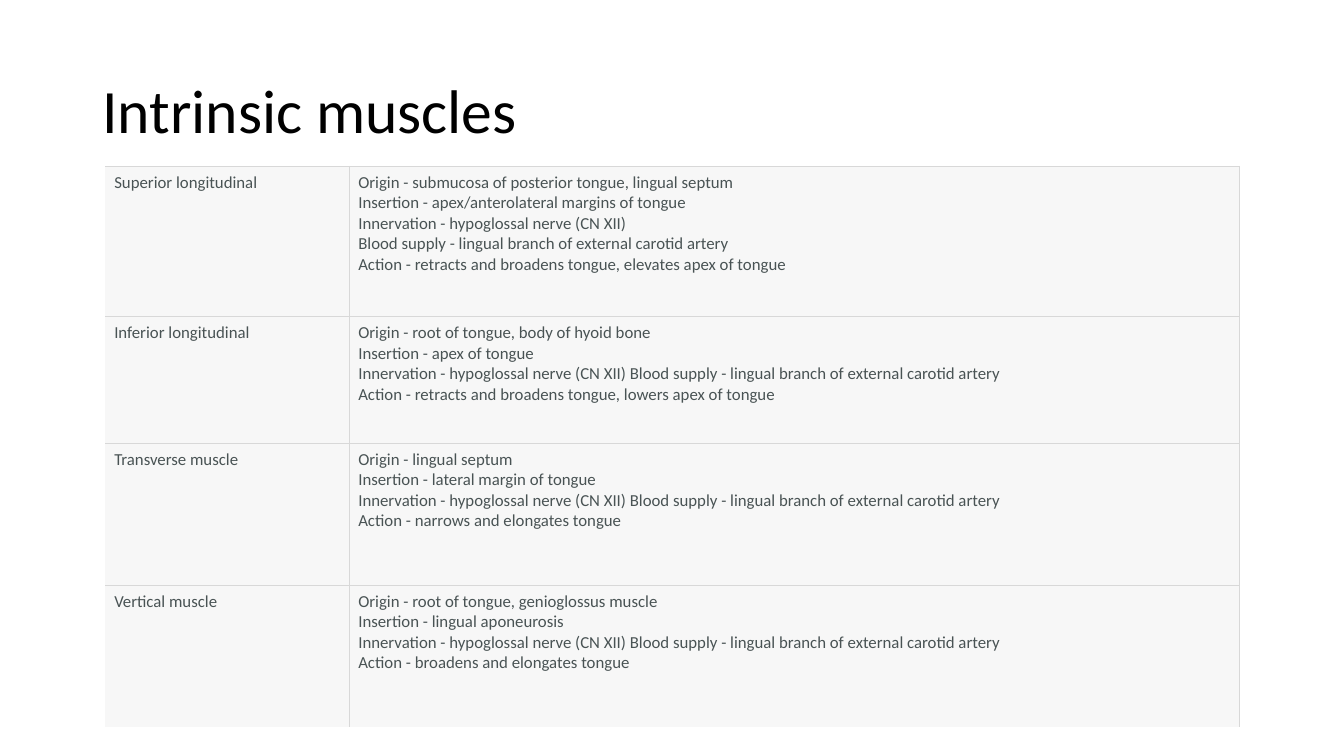
from copy import deepcopy
from dataclasses import dataclass

from lxml import etree
from pptx import Presentation
from pptx.dml.color import RGBColor
from pptx.enum import text
from pptx.oxml import ns
from pptx.util import Cm, Pt


@dataclass(frozen=True)
class Theme:
    font: str = "Calibri"
    title_size: float = 44
    body_size: float = 12
    title_color: str = "000000"
    body_color: str = "495354"
    cell_fill: str = "F7F7F7"
    border: str = "D8D8D8"
    border_width: float = 0.75


@dataclass(frozen=True)
class Muscle:
    name: str
    facts: tuple[str, ...]
    height: float


THEME = Theme()
COL_WIDTHS = (6.15, 22.43)
NERVE = "Innervation - hypoglossal nerve (CN XII)"
BLOOD = "Blood supply - lingual branch of external carotid artery"
NERVE_AND_BLOOD = f"{NERVE} {BLOOD}"
MUSCLES = (
    Muscle("Superior longitudinal", (
        "Origin - submucosa of posterior tongue, lingual septum",
        "Insertion - apex/anterolateral margins of tongue",
        NERVE,
        BLOOD,
        "Action - retracts and broadens tongue, elevates apex of tongue",
    ), 3.79),
    Muscle("Inferior longitudinal", (
        "Origin - root of tongue, body of hyoid bone",
        "Insertion - apex of tongue",
        NERVE_AND_BLOOD,
        "Action - retracts and broadens tongue, lowers apex of tongue",
    ), 3.19),
    Muscle("Transverse muscle", (
        "Origin - lingual septum",
        "Insertion - lateral margin of tongue",
        NERVE_AND_BLOOD,
        "Action - narrows and elongates tongue",
    ), 3.58),
    Muscle("Vertical muscle", (
        "Origin - root of tongue, genioglossus muscle",
        "Insertion - lingual aponeurosis",
        NERVE_AND_BLOOD,
        "Action - broadens and elongates tongue",
    ), 3.58),
)


def write_text(tf, *lines: str, size: float, color: str, spacing: float = 1.0) -> None:
    p = tf.paragraphs[0]
    p.line_spacing = spacing
    for i, line in enumerate(lines):
        if i:
            p.add_line_break()
            p._p[-1].append(deepcopy(r._r.rPr))
        r = p.add_run()
        r.text = line
        r.font.name = THEME.font
        r.font.size = Pt(size)
        r.font.color.rgb = RGBColor.from_string(color)


def set_borders(cell, sides: str) -> None:
    tc_pr = cell._tc.get_or_add_tcPr()
    for i, side in enumerate("LRTB"):
        ln = etree.Element(ns.qn(f"a:ln{side}"), w=str(Pt(THEME.border_width)))
        if side in sides:
            fill = etree.SubElement(ln, ns.qn("a:solidFill"))
            etree.SubElement(fill, ns.qn("a:srgbClr"), val=THEME.border)
        else:
            etree.SubElement(ln, ns.qn("a:noFill"))
        tc_pr.insert(i, ln)


def fill_cell(cell, lines: tuple[str, ...], sides: str) -> None:
    cell.margin_left = cell.margin_right = Cm(0.23)
    cell.margin_top = cell.margin_bottom = Cm(0.15)
    cell.vertical_anchor = text.MSO_ANCHOR.TOP
    cell.fill.solid()
    cell.fill.fore_color.rgb = RGBColor.from_string(THEME.cell_fill)
    write_text(cell.text_frame, *lines, size=THEME.body_size, color=THEME.body_color)
    set_borders(cell, sides)


def add_title(slide, title: str) -> None:
    sp = slide.shapes.add_textbox(Cm(2.33), Cm(1.01), Cm(29.21), Cm(3.68))
    tf = sp.text_frame
    tf.word_wrap = True
    tf.vertical_anchor = text.MSO_ANCHOR.MIDDLE
    write_text(tf, title, size=THEME.title_size, color=THEME.title_color, spacing=0.9)


def add_muscle_table(slide, muscles: tuple[Muscle, ...]) -> None:
    height = sum(m.height for m in muscles)
    table = slide.shapes.add_table(
        len(muscles), len(COL_WIDTHS),
        Cm(2.65), Cm(4.19), Cm(sum(COL_WIDTHS)), Cm(height),
    ).table
    table.first_row = table.horz_banding = False
    for col, width in zip(table.columns, COL_WIDTHS):
        col.width = Cm(width)
    for i, muscle in enumerate(muscles):
        table.rows[i].height = Cm(muscle.height)
        bottom = "B" if i < len(muscles) - 1 else ""
        fill_cell(table.cell(i, 0), (muscle.name,), "RT" + bottom)
        fill_cell(table.cell(i, 1), muscle.facts, "LRT" + bottom)


def main() -> None:
    prs = Presentation()
    prs.slide_width, prs.slide_height = Cm(33.87), Cm(19.05)
    slide = prs.slides.add_slide(prs.slide_layouts[6])
    add_title(slide, "Intrinsic muscles")
    add_muscle_table(slide, MUSCLES)
    prs.save("out.pptx")


if __name__ == "__main__":
    main()
